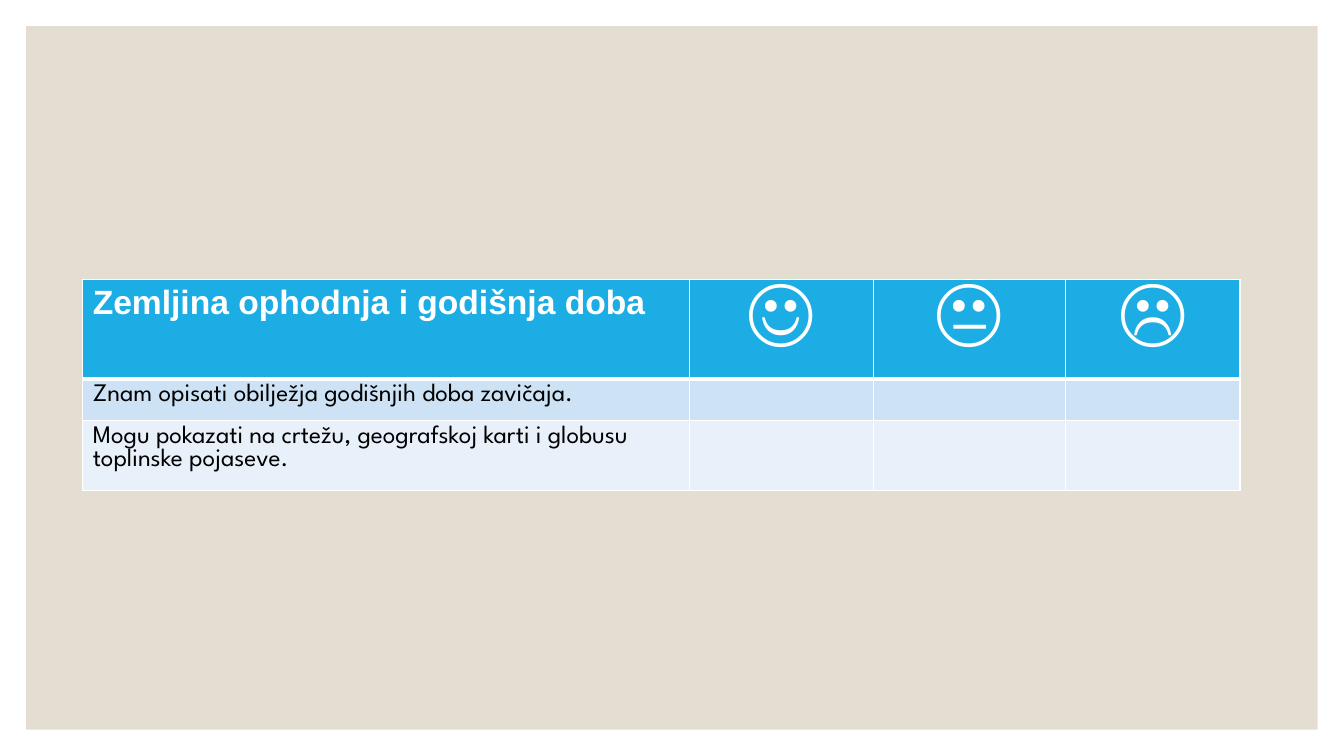
from lxml import etree
from pptx import Presentation
from pptx.dml.color import RGBColor
from pptx.enum.shapes import MSO_SHAPE
from pptx.enum.text import PP_ALIGN
from pptx.oxml.ns import qn
from pptx.util import Inches, Pt

RECTANGLE = MSO_SHAPE.RECTANGLE
LEFT, CENTER = PP_ALIGN.LEFT, PP_ALIGN.CENTER

# Content
ROWS = [
    ["Zemljina ophodnja i godišnja doba", "☺", "😐", "☹"],
    ["Znam opisati obilježja godišnjih doba zavičaja.", "", "", ""],
    ["Mogu pokazati na crtežu, geografskoj karti i globusu toplinske pojaseve.", "", "", ""],
]

# Layout and colours
SLIDE_WIDTH, SLIDE_HEIGHT, MARGIN = 13.33, 7.5, 0.26
TABLE_LEFT, TABLE_TOP = 0.82, 2.77
COLUMN_WIDTHS = [6.02, 1.82, 1.91, 1.73]
ROW_HEIGHTS = [0.99, 0.41, 0.7]
WHITE = RGBColor(0xFF, 0xFF, 0xFF)
BLACK = RGBColor(0, 0, 0)
SAND = RGBColor(0xE3, 0xDE, 0xD1)
ROW_FILLS = [RGBColor(0x1C, 0xAD, 0xE4), RGBColor(0xCD, 0xE3, 0xF5), RGBColor(0xE8, 0xF1, 0xFA)]
HEADING = {"name": "Arial", "size": Pt(24), "bold": True}
FACE = {"name": "League Spartan", "size": Pt(54), "bold": True}
STATEMENT = {"name": "League Spartan", "size": Pt(18), "bold": False}


def set_borders(cell, widths):
    """Draw white cell borders; widths are points by side."""
    properties = cell._tc.get_or_add_tcPr()
    for position, (side, width) in enumerate(widths.items()):
        line = etree.Element(qn(f"a:ln{side}"), w=str(Pt(width)))
        fill = etree.SubElement(line, qn("a:solidFill"))
        etree.SubElement(fill, qn("a:srgbClr"), val=str(WHITE))
        properties.insert(position, line)


def fill_cell(cell, text, row, column):
    cell.fill.solid()
    cell.fill.fore_color.rgb = ROW_FILLS[row]
    set_borders(cell, {"L": 1, "R": 1, "T": 3 if row == 1 else 1, "B": 3 if row == 0 else 1})
    para = cell.text_frame.paragraphs[0]
    para.alignment = CENTER if column else LEFT
    style = STATEMENT if row else FACE if column else HEADING
    span = para.add_run() if text else para
    if text:
        span.text = text
    for name, value in style.items():
        setattr(span.font, name, value)
    span.font.color.rgb = BLACK if row else WHITE


deck = Presentation()
deck.slide_width, deck.slide_height = Inches(SLIDE_WIDTH), Inches(SLIDE_HEIGHT)
page = deck.slides.add_slide(deck.slide_layouts[6])

# Sand panel inside a white margin
panel = page.shapes.add_shape(
    RECTANGLE, Inches(MARGIN), Inches(MARGIN),
    Inches(SLIDE_WIDTH - 2 * MARGIN), Inches(SLIDE_HEIGHT - 2 * MARGIN))
panel.shadow.inherit = False
panel.fill.solid()
panel.fill.fore_color.rgb = SAND
panel.line.fill.background()

# Self-assessment table
table = page.shapes.add_table(
    len(ROWS), len(COLUMN_WIDTHS), Inches(TABLE_LEFT), Inches(TABLE_TOP),
    Inches(sum(COLUMN_WIDTHS)), Inches(sum(ROW_HEIGHTS))).table
for column, width in zip(table.columns, COLUMN_WIDTHS):
    column.width = Inches(width)
for row, height in zip(table.rows, ROW_HEIGHTS):
    row.height = Inches(height)
for row, texts in enumerate(ROWS):
    for column, text in enumerate(texts):
        fill_cell(table.cell(row, column), text, row, column)

deck.save("out.pptx")
